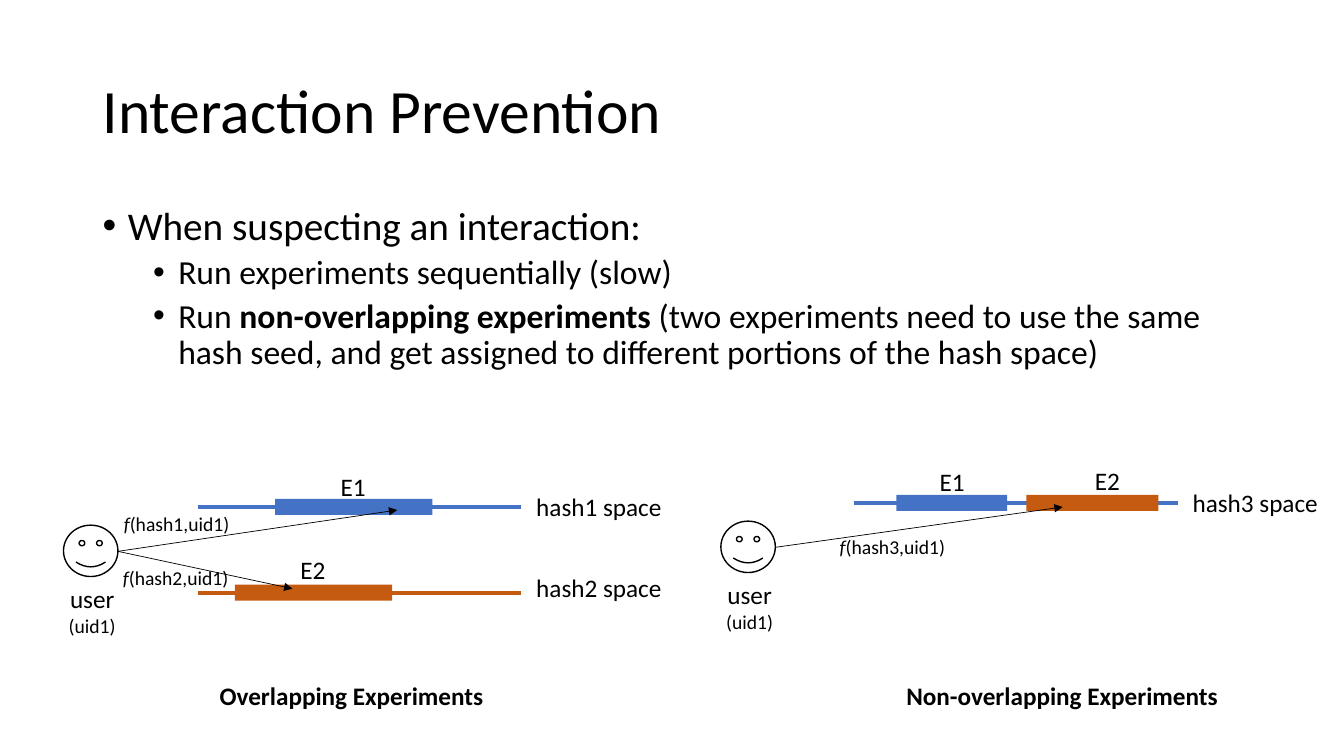
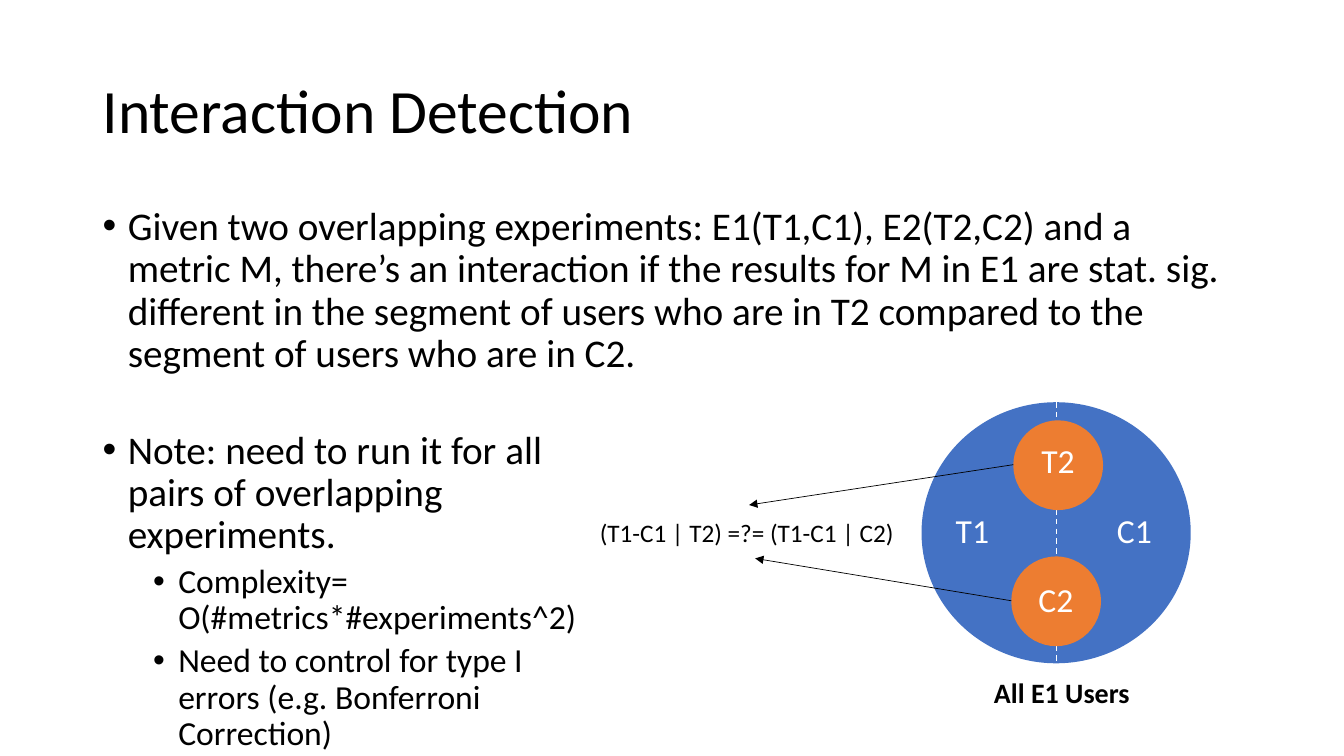
from pptx import Presentation
from pptx.dml.color import RGBColor
from pptx.enum.dml import MSO_LINE
from pptx.enum.shapes import MSO_CONNECTOR, MSO_SHAPE
from pptx.enum.text import MSO_ANCHOR, PP_ALIGN
from pptx.oxml.ns import qn
from pptx.util import Inches, Pt
from lxml.etree import SubElement

FONT = "Calibri"
COLORS = {"black": "000000", "white": "FFFFFF", "blue": "4472C4",
          "rust": "C55A11", "orange": "ED7D31"}
BULLETS = {28: (0, 0.25, 10), 24: (1, 0.75, 5)}


def add_text(s, box, paras, color="black", align=PP_ALIGN.LEFT,
             anchor=MSO_ANCHOR.TOP, wrap=False, spacing=None, bullets=False):
    tf = s.shapes.add_textbox(*map(Inches, box)).text_frame
    tf.word_wrap = wrap
    tf.vertical_anchor = anchor
    for i, (size, *runs) in enumerate(paras):
        p = tf.paragraphs[0] if i == 0 else tf.add_paragraph()
        p.alignment = align
        if spacing:
            p.line_spacing = spacing
        if bullets:
            level, indent, before = BULLETS[size]
            p.level = level
            p.space_before = Pt(before)
            pPr = p._p.get_or_add_pPr()
            pPr.set("marL", str(Inches(indent)))
            pPr.set("indent", str(Inches(-0.25)))
            SubElement(pPr, qn("a:buFont")).set("typeface", "Arial")
            SubElement(pPr, qn("a:buChar")).set("char", "•")
        for words, style in runs:
            r = p.add_run()
            r.text = words
            r.font.name = FONT
            r.font.size = Pt(size)
            r.font.bold = style == "b"
            r.font.italic = style == "i"
            r.font.color.rgb = RGBColor.from_string(COLORS[color])


def add_line(s, ends, color="black", width=0.5, arrow=False, dash=None):
    line = s.shapes.add_connector(MSO_CONNECTOR.STRAIGHT, *map(Inches, ends))
    line.line.color.rgb = RGBColor.from_string(COLORS[color])
    line.line.width = Pt(width)
    if dash:
        line.line.dash_style = dash
    if arrow:
        SubElement(line.line._get_or_add_ln(), qn("a:tailEnd")).set("type", "triangle")
    SubElement(line._element.spPr, qn("a:effectLst"))


prs = Presentation()
prs.slide_width = Inches(13.33)
prs.slide_height = Inches(7.5)

slides = []
for title, body_height, body in [
    ("Interaction Prevention", 2.27, [
        (28, ("When suspecting an interaction:", "")),
        (24, ("Run experiments sequentially (slow)", "")),
        (24, ("Run ", ""), ("non-overlapping experiments ", "b"),
         ("(two experiments need to use the same hash seed, and get assigned "
          "to different portions of the hash space)", "")),
    ]),
    ("Interaction Detection", 1.88, [
        (28, ("Given two overlapping experiments: E1(T1,C1), E2(T2,C2) and a "
              "metric M, there’s an interaction if the results for M in E1 are "
              "stat. sig. different in the segment of users who are in T2 "
              "compared to the segment of users who are in C2.", "")),
    ]),
]:
    s = prs.slides.add_slide(prs.slide_layouts[6])
    add_text(s, (0.92, 0.4, 11.5, 1.45), [(44, (title, ""))],
             anchor=MSO_ANCHOR.MIDDLE, wrap=True, spacing=0.9)
    add_text(s, (0.92, 2, 11.5, body_height), body,
             wrap=True, spacing=0.9, bullets=True)
    slides.append(s)
prevention, detection = slides

s = prevention
diagrams = [
    {"user": (0.63, 5.21),
     "spaces": [("hash1", 1.96, 5.03, "blue", 4.83), ("hash2", 1.96, 5.88, "rust", 5.63)],
     "bars": [("E1", 2.73, 4.95, 1.56, "blue", 3.28, 4.63),
              ("E2", 2.33, 5.8, 1.56, "rust", 2.88, 5.45)],
     "hashes": [("hash1", 3.94, 5.06, 1.13, 5.03), ("hash2", 2.9, 5.84, 1.12, 5.57)],
     "caption": ("Overlapping Experiments", 2.08, 2.84)},
    {"user": (7.15, 5.17),
     "spaces": [("hash3", 8.47, 4.99, "blue", 4.79)],
     "bars": [("E1", 8.89, 4.91, 1.1, "blue", 9.22, 4.58),
              ("E2", 10.18, 4.91, 1.31, "rust", 10.76, 4.57)],
     "hashes": [("hash3", 10.54, 5.03, 8.23, 5.26)],
     "caption": ("Non-overlapping Experiments", 8.89, 3.31)},
]
for d in diagrams:
    for name, x, y, color, label_y in d["spaces"]:
        add_line(s, (x, y, x + 3.21, y), color, 3)
        add_text(s, (x + 3.26, label_y, 1.52, 0.4), [(18, (f"{name} space", ""))])
    for name, x, y, w, color, label_x, label_y in d["bars"]:
        bar = s.shapes.add_shape(MSO_SHAPE.RECTANGLE, *map(Inches, (x, y, w, 0.16)))
        bar.shadow.inherit = False
        bar.fill.solid()
        bar.fill.fore_color.rgb = RGBColor.from_string(COLORS[color])
        bar.line.fill.background()
        add_text(s, (label_x, label_y, 0.45, 0.4), [(18, (name, ""))])
    x, y = d["user"]
    face = s.shapes.add_shape(MSO_SHAPE.SMILEY_FACE, *map(Inches, (x, y, 0.54, 0.51)))
    face.shadow.inherit = False
    face.fill.background()
    face.line.color.rgb = RGBColor.from_string(COLORS["black"])
    face.line.width = Pt(1)
    add_text(s, (x - 0.05, y + 0.53, 0.67, 0.64),
             [(18, ("user", "")), (14, ("(uid1)", ""))], align=PP_ALIGN.CENTER)
    for name, tip_x, tip_y, label_x, label_y in d["hashes"]:
        add_line(s, (x + 0.54, y + 0.26, tip_x, tip_y), arrow=True)
        add_text(s, (label_x, label_y, 1.26, 0.34),
                 [(14, ("f", "i"), (f"({name},uid1)", ""))])
    caption, x, w = d["caption"]
    add_text(s, (x, 6.7, w, 0.4), [(18, (caption, "b"))])

s = detection
for x, y, w, h, color in [(9.14, 3.99, 2.67, 2.59, "blue"),
                          (10.05, 4.17, 0.89, 0.89, "orange"),
                          (10.03, 5.52, 0.89, 0.89, "orange")]:
    circle = s.shapes.add_shape(MSO_SHAPE.OVAL, *map(Inches, (x, y, w, h)))
    circle.shadow.inherit = False
    circle.fill.solid()
    circle.fill.fore_color.rgb = RGBColor.from_string(COLORS[color])
    circle.line.fill.background()
    if color == "blue":
        add_line(s, (10.48, 3.99, 10.48, 6.59), "white", 1, dash=MSO_LINE.DASH)
for name, x, y in [("T1", 9.38, 5.01), ("C1", 10.98, 5.01),
                   ("T2", 10.23, 4.32), ("C2", 10.2, 5.69)]:
    add_text(s, (x, y, 0.55, 0.5), [(24, (name, ""))], "white")
for ends in [(10.05, 4.61, 7.43, 5.01), (10.03, 5.96, 7.49, 5.54)]:
    add_line(s, ends, arrow=True)
add_text(s, (5.85, 5.08, 3.15, 0.4), [(18, ("(T1-C1 | T2) =?= (T1-C1 | C2)", ""))])
add_text(s, (9.76, 6.65, 1.77, 0.44), [(20, ("All E1 Users", "b"))], wrap=True)
add_text(s, (0.92, 4.22, 5, 3.28), [
    (28, ("Note: need to run it for all pairs of overlapping experiments.", "")),
    (24, ("Complexity= O(#metrics*#experiments^2)", "")),
    (24, ("Need to control for type I errors (e.g. Bonferroni Correction)", "")),
], wrap=True, spacing=0.9, bullets=True)

prs.save("out.pptx")
